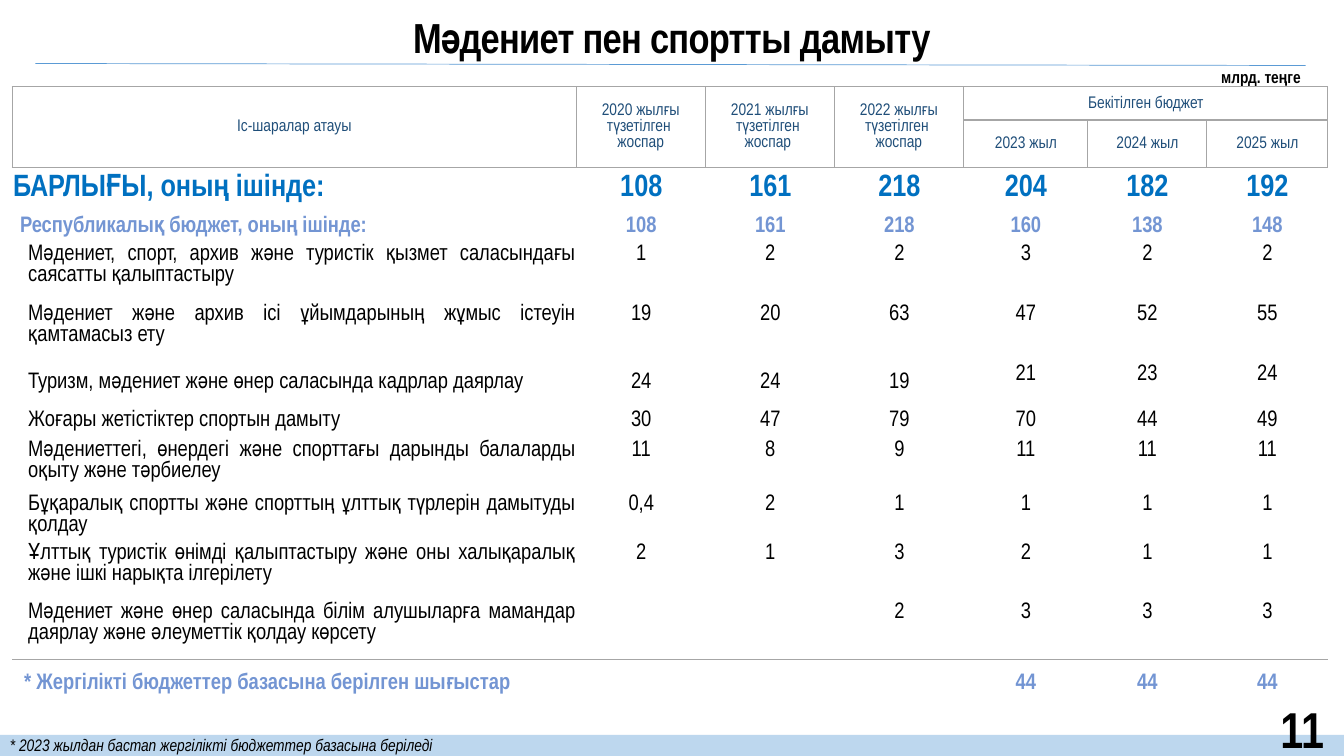
from lxml.etree import SubElement
from pptx import Presentation
from pptx.dml.color import RGBColor
from pptx.enum.shapes import MSO_CONNECTOR, MSO_SHAPE
from pptx.enum.text import MSO_ANCHOR as ANCHOR, PP_ALIGN as ALIGN
from pptx.oxml.ns import qn
from pptx.util import Inches, Pt

FONT = "Arial Narrow"
BLACK, GRID, HEADER = "000000", "A6A6A6", "1F4E79"
TOTAL, SUBTOTAL = "0070C0", "7395D3"
NO_STYLE_NO_GRID = "{2D5ABB26-0587-4C30-8999-92F81FD0307C}"

COLUMN_WIDTHS = [5.6, 1.28, 1.28, 1.28, 1.23, 1.18, 1.2]
ROW_HEIGHTS = [0.33, 0.47, 0.4, 0.36, 0.6, 0.59, 0.37, 0.39, 0.53, 0.49, 0.58, 0.57, 0.47]
PLAN_HEADINGS = ["2020 жылғы түзетілген \nжоспар", "2021 жылғы түзетілген \nжоспар ",
                 "2022 жылғы түзетілген \nжоспар"]
BUDGET_YEARS = ["2023 жыл", "2024 жыл", "2025 жыл"]

TOTAL_ROW = ["БАРЛЫҒЫ, оның ішінде:", "108", "161", "218", "204", "182", "192"]
REPUBLIC_ROW = ["Республикалық бюджет, оның ішінде:", "108", "161", "218", "160", "138", "148"]
MEASURES = [
    ["Мәдениет, спорт, архив және туристік қызмет саласындағы саясатты қалыптастыру",
     "1", "2", "2", "3", "2", "2"],
    ["Мәдениет және архив ісі ұйымдарының жұмыс істеуін қамтамасыз ету",
     "19", "20", "63", "47", "52", "55"],
    ["Туризм, мәдениет және өнер саласында кадрлар даярлау",
     "24", "24", "19", "21", "23", "24"],
    ["Жоғары жетістіктер спортын дамыту", "30", "47", "79", "70", "44", "49"],
    ["Мәдениеттегі, өнердегі және спорттағы дарынды балаларды оқыту және тәрбиелеу",
     "11", "8", "9", "11", "11", "11"],
    ["Бұқаралық спортты және спорттың ұлттық түрлерін дамытуды қолдау",
     "0,4", "2", "1", "1", "1", "1"],
    ["Ұлттық туристік өнімді қалыптастыру және оны халықаралық және ішкі нарықта ілгерілету",
     "2", "1", "3", "2", "1", "1"],
    ["Мәдениет және өнер саласында білім алушыларға мамандар даярлау және әлеуметтік "
     "қолдау көрсету", "", "", "2", "3", "3", "3"],
]
LOCAL_ROW = ["* Жергілікті бюджеттер базасына берілген шығыстар", "", "", "", "44", "44", "44"]
# Number of leading cells centred vertically in each measure row
MIDDLE_CELLS = [0, 0, 4, 7, 0, 0, 0, 0]


def rgb(color):
    return RGBColor.from_string(color)


def style_text(frame, size, color=BLACK, bold=False, italic=False, align=ALIGN.LEFT, spacing=None):
    for paragraph in frame.paragraphs:
        paragraph.alignment = align
        if spacing:
            paragraph.line_spacing = spacing
        for run in paragraph.runs:
            font = run.font
            font.name, font.size, font.bold, font.italic = FONT, Pt(size), bold, italic
            font.color.rgb = rgb(color)


def add_label(slide, box, text, size, **style):
    frame = slide.shapes.add_textbox(*map(Inches, box)).text_frame
    frame.word_wrap = True
    frame.vertical_anchor = ANCHOR.MIDDLE
    frame.text = text
    style_text(frame, size, **style)
    return frame


def set_borders(cell, sides):
    properties = cell._tc.get_or_add_tcPr()
    for position, side in enumerate("LRTB"):
        border = SubElement(properties, qn(f"a:ln{side}"), w=str(Pt(1)))
        if side in sides:
            fill = SubElement(border, qn("a:solidFill"))
            SubElement(fill, qn("a:srgbClr"), val=GRID)
        else:
            SubElement(border, qn("a:noFill"))
        properties.insert(position, border)


def fill_cell(cell, text, size, color, bold=False, align=ALIGN.CENTER, anchor=ANCHOR.MIDDLE,
              left=0.01, top=0.01, spacing=None):
    cell.margin_left, cell.margin_right = Inches(left), Inches(0.01)
    cell.margin_top, cell.margin_bottom = Inches(top), 0
    cell.vertical_anchor = anchor
    cell.text = text
    style_text(cell.text_frame, size, color, bold, align=align, spacing=spacing)


def fill_summary_row(table, row, texts, size, color, left, align):
    for column, text in enumerate(texts):
        name = {"left": left, "align": align} if column == 0 else {}
        fill_cell(table.cell(row, column), text, size, color, bold=True, **name)


def fill_table_header(table):
    for column in range(4):
        table.cell(0, column).merge(table.cell(1, column))
    table.cell(0, 4).merge(table.cell(0, 6))
    fill_cell(table.cell(0, 0), "Іс-шаралар атауы", 12, HEADER)
    for column, heading in enumerate(PLAN_HEADINGS, 1):
        fill_cell(table.cell(0, column), heading, 12, HEADER, left=0, top=0, spacing=Pt(11.3))
    fill_cell(table.cell(0, 4), "Бекітілген бюджет", 12, HEADER)
    for column, year in enumerate(BUDGET_YEARS, 4):
        fill_cell(table.cell(1, column), year, 12, HEADER)


def add_budget_table(slide, left, top):
    frame = slide.shapes.add_table(len(ROW_HEIGHTS), len(COLUMN_WIDTHS), Inches(left), Inches(top),
                                   Inches(sum(COLUMN_WIDTHS)), Inches(sum(ROW_HEIGHTS)))
    table = frame.table
    table.first_row = table.horz_banding = False
    table._tbl.tblPr.find(qn("a:tableStyleId")).text = NO_STYLE_NO_GRID
    for column, width in zip(table.columns, COLUMN_WIDTHS):
        column.width = Inches(width)
    for row, height in zip(table.rows, ROW_HEIGHTS):
        row.height = Inches(height)

    # Rows
    fill_table_header(table)
    fill_summary_row(table, 2, TOTAL_ROW, 22, TOTAL, 0.01, ALIGN.JUSTIFY)
    fill_summary_row(table, 3, REPUBLIC_ROW, 16, SUBTOTAL, 0.08, ALIGN.LEFT)
    for row, (measure, middle) in enumerate(zip(MEASURES, MIDDLE_CELLS), 4):
        for column, text in enumerate(measure):
            name = {"left": 0.16, "align": ALIGN.JUSTIFY} if column == 0 else {}
            anchor = ANCHOR.MIDDLE if column < middle else ANCHOR.TOP
            fill_cell(table.cell(row, column), text, 16, BLACK, anchor=anchor, top=0,
                      spacing=Pt(15), **name)
    last = len(ROW_HEIGHTS) - 1
    fill_summary_row(table, last, LOCAL_ROW, 16, SUBTOTAL, 0.12, ALIGN.LEFT)

    # Grid lines
    sides = {0: "LRTB", 1: "LRTB", 2: "T", last - 1: "B", last: "T"}
    for row in range(len(ROW_HEIGHTS)):
        for column in range(len(COLUMN_WIDTHS)):
            cell = table.cell(row, column)
            cell.fill.background()
            set_borders(cell, sides.get(row, ""))


def add_footer_band(slide, left, top, width, height):
    band = slide.shapes.add_shape(MSO_SHAPE.RECTANGLE, *map(Inches, (left, top, width, height)))
    band.shadow.inherit = False
    band.fill.solid()
    band.fill.fore_color.rgb = rgb("BDD7EE")
    band.line.fill.background()
    add_label(slide, (left + 11.8, top - 0.26, 1.43, 0.4), "11", 36, bold=True, align=ALIGN.RIGHT)
    add_label(slide, (left, top - 0.09, 12.53, 0.4),
              "* 2023 жылдан бастап жергілікті бюджеттер базасына беріледі", 12,
              italic=True, align=ALIGN.JUSTIFY, spacing=0.9)


def add_heading(slide, left, top, width, height):
    title = add_label(slide, (left, top, width, height), "Мәдениет пен спортты дамыту", 30,
                      bold=True, align=ALIGN.CENTER, spacing=1.1)
    title.paragraphs[0].runs[0].font._element.set("spc", "-50")
    add_label(slide, (left + 11.8, top + 0.44, 1.2, 0.48), "млрд. теңге", 12,
              bold=True, align=ALIGN.RIGHT, spacing=1.1)
    # Rule under the title
    ends = (left + 0.35, top + 0.56, left + 12.95, top + 0.58)
    rule = slide.shapes.add_connector(MSO_CONNECTOR.STRAIGHT, *map(Inches, ends))
    rule.line.color.rgb = rgb("5B9BD5")
    rule.line.width = Pt(0.5)
    SubElement(rule._element.spPr, qn("a:effectLst"))


def main():
    deck = Presentation()
    deck.slide_width, deck.slide_height = Inches(13.33), Inches(7.5)
    slide = deck.slides.add_slide(deck.slide_layouts[6])
    add_footer_band(slide, 0, 7.29, 13.33, 0.21)
    add_heading(slide, 0, 0.07, 13.33, 0.54)
    add_budget_table(slide, 0.12, 0.86)
    deck.save("out.pptx")


if __name__ == "__main__":
    main()
